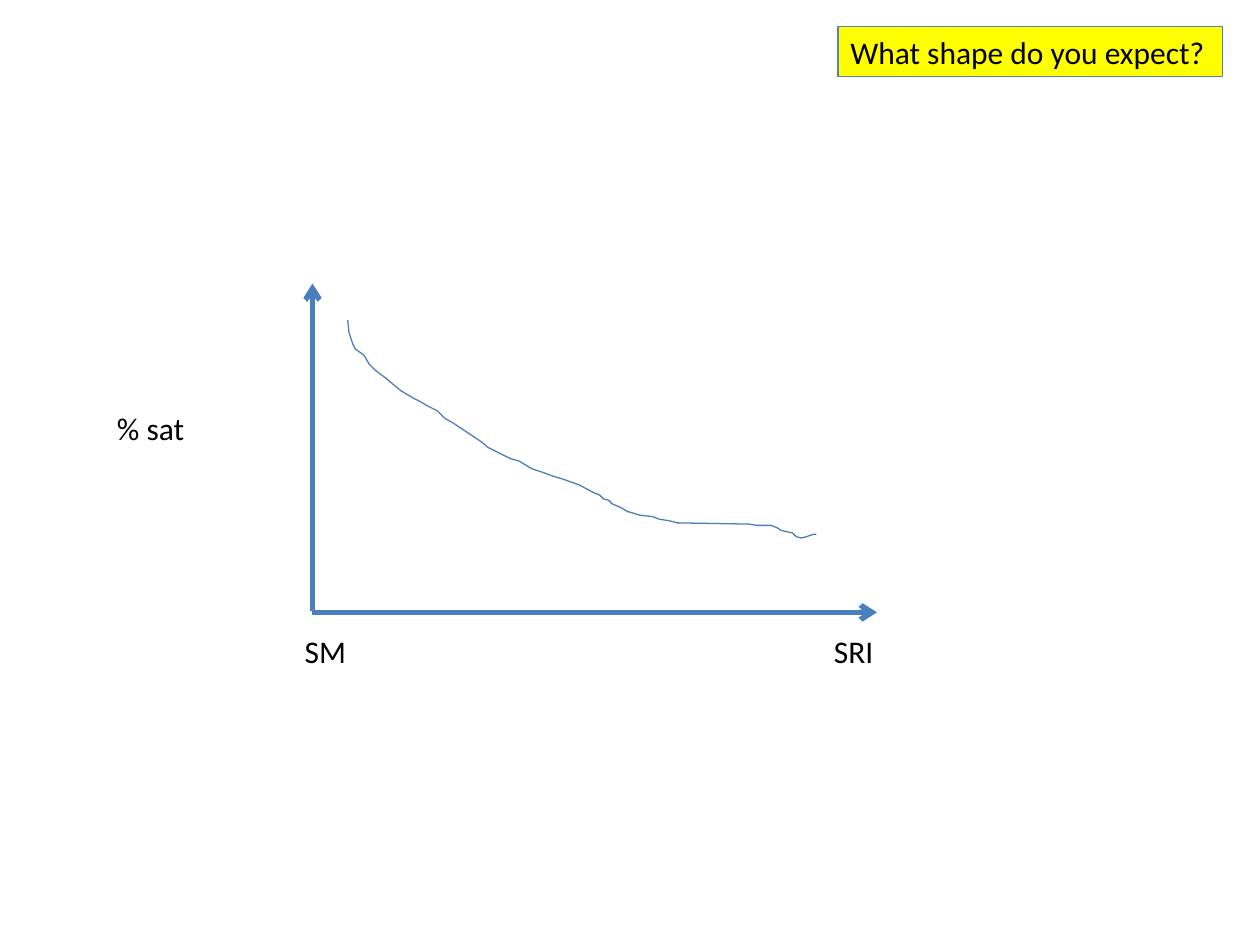
from lxml.etree import SubElement
from pptx import Presentation
from pptx.dml.color import RGBColor
from pptx.enum.shapes import MSO_CONNECTOR as CONNECTOR, MSO_SHAPE as SHAPE
from pptx.enum.text import MSO_AUTO_SIZE as AUTO_SIZE, PP_ALIGN as ALIGN
from pptx.oxml.ns import qn
from pptx.util import Inches, Pt

AXIS_BLUE, BORDER_BLUE = "4B7EBC", "4F81BD"
YELLOW, BLACK = "FFFF00", "000000"

ORIGIN_X, AXIS_Y = 2.48, 4.86
LABEL_HEIGHT = 0.4

CURVE_POINTS = [
    (2.76, 2.54), (2.77, 2.64), (2.8, 2.73), (2.82, 2.77), (2.89, 2.82),
    (2.93, 2.89), (2.98, 2.94), (3.06, 3), (3.12, 3.05), (3.18, 3.1),
    (3.23, 3.13), (3.28, 3.16), (3.34, 3.19), (3.39, 3.22), (3.47, 3.26),
    (3.53, 3.32), (3.6, 3.36), (3.75, 3.46), (3.81, 3.5), (3.85, 3.53),
    (3.87, 3.55), (3.97, 3.6), (4.05, 3.64), (4.12, 3.66), (4.22, 3.72),
    (4.31, 3.75), (4.39, 3.78), (4.46, 3.8), (4.6, 3.85), (4.71, 3.91),
    (4.76, 3.93), (4.79, 3.96), (4.83, 3.97), (4.86, 4), (4.93, 4.03),
    (4.98, 4.06), (5.05, 4.08), (5.08, 4.09), (5.18, 4.1), (5.23, 4.12),
    (5.29, 4.13), (5.34, 4.14), (5.37, 4.15), (5.94, 4.16), (6.01, 4.17),
    (6.12, 4.17), (6.17, 4.19), (6.2, 4.21), (6.29, 4.23), (6.32, 4.26),
    (6.36, 4.27), (6.4, 4.26), (6.46, 4.24), (6.48, 4.24),
]


def color(hex_value):
    return RGBColor.from_string(hex_value)


def apply_format(target, values):
    for name, value in values.items():
        setattr(target, name, value)


class SlideBuilder:
    font_format = {"name": "Calibri", "size": Pt(18)}
    frame_format = {"word_wrap": False, "auto_size": AUTO_SIZE.SHAPE_TO_FIT_TEXT}

    def __init__(self, slide):
        self.slide = slide
        self.shapes = slide.shapes

    def style_line(self, shape, hex_value, width):
        shape.line.color.rgb = color(hex_value)
        shape.line.width = Pt(width)

    def fill_text(self, shape, text):
        frame = shape.text_frame
        apply_format(frame, self.frame_format)
        paragraph = frame.paragraphs[0]
        paragraph.alignment = ALIGN.LEFT
        run = paragraph.add_run()
        run.text = text
        apply_format(run.font, self.font_format)
        run.font.color.rgb = color(BLACK)

    def label(self, text, left, top, width):
        box = self.shapes.add_textbox(*map(Inches, (left, top, width, LABEL_HEIGHT)))
        self.fill_text(box, text)

    def callout(self, text, left, top, width):
        box = self.shapes.add_shape(
            SHAPE.RECTANGLE, *map(Inches, (left, top, width, LABEL_HEIGHT)))
        box.shadow.inherit = False
        box.fill.solid()
        box.fill.fore_color.rgb = color(YELLOW)
        self.style_line(box, BORDER_BLUE, 0.75)
        self.fill_text(box, text)

    def axis(self, start, end):
        """Draw a thick line with an open arrowhead at its end."""
        arrow = self.shapes.add_connector(
            CONNECTOR.STRAIGHT, *map(Inches, (*start, *end)))
        self.style_line(arrow, AXIS_BLUE, 3)
        properties = arrow._element.spPr
        SubElement(properties.find(qn("a:ln")), qn("a:tailEnd"), type="arrow")
        SubElement(properties, qn("a:effectLst"))

    def curve(self, points):
        start, *others = [(Inches(x), Inches(y)) for x, y in points]
        builder = self.shapes.build_freeform(*start)
        builder.add_line_segments(others, close=False)
        shape = builder.convert_to_shape()
        shape.shadow.inherit = False
        shape.fill.background()
        self.style_line(shape, AXIS_BLUE, 0.75)


def main():
    presentation = Presentation()
    apply_format(presentation, {"slide_width": Inches(10), "slide_height": Inches(7.5)})
    builder = SlideBuilder(presentation.slides.add_slide(presentation.slide_layouts[6]))

    builder.axis((ORIGIN_X, 4.85), (ORIGIN_X, 2.25))
    builder.axis((ORIGIN_X, AXIS_Y), (6.96, AXIS_Y))
    for label in (("% sat", 0.83, 3.2, 0.74),
                  ("SM", 2.32, 4.97, 0.53),
                  ("SRI", 6.52, 4.97, 0.52)):
        builder.label(*label)
    builder.callout("What shape do you expect?", 6.65, 0.21, 3.05)
    builder.curve(CURVE_POINTS)

    presentation.save("out.pptx")


if __name__ == "__main__":
    main()
